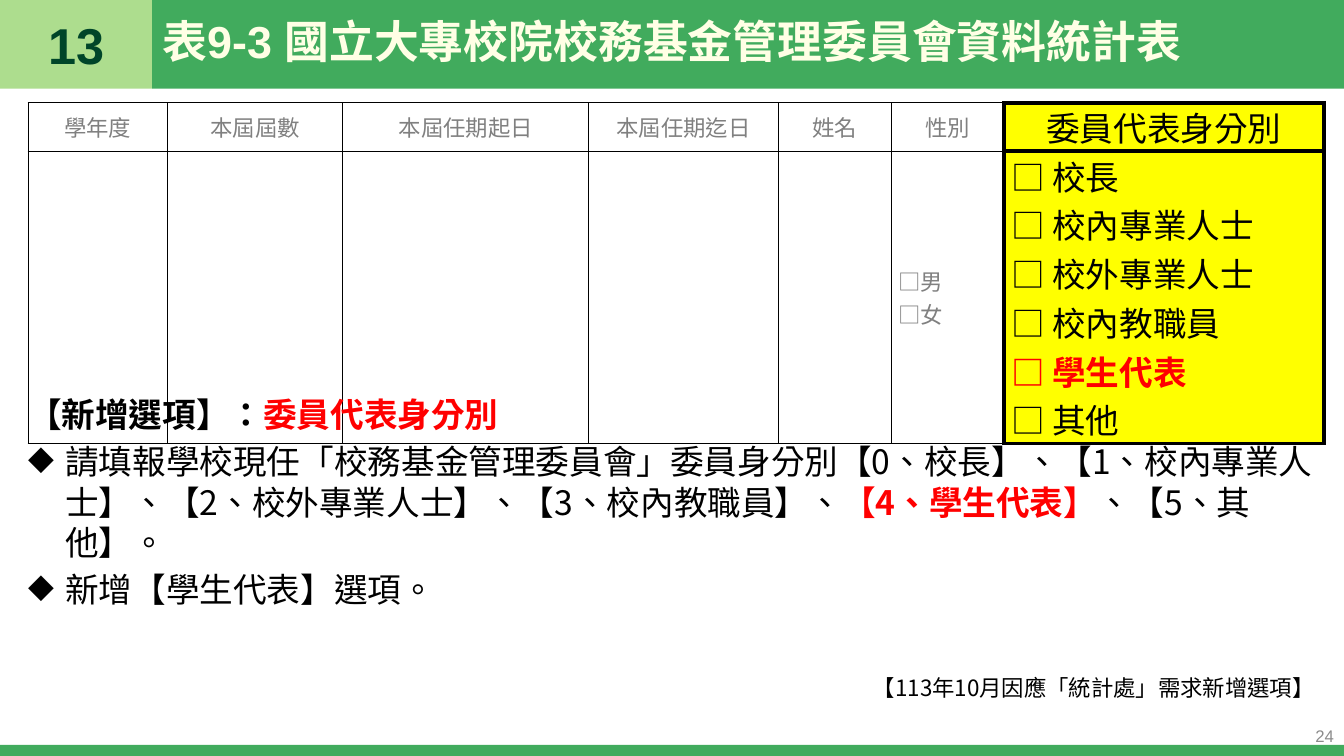
from dataclasses import dataclass

from lxml.etree import SubElement
from pptx import Presentation
from pptx.dml.color import RGBColor
from pptx.enum.shapes import MSO_SHAPE
from pptx.enum.text import MSO_ANCHOR, PP_ALIGN
from pptx.oxml.ns import qn
from pptx.util import Inches, Pt


@dataclass(frozen=True)
class Theme:
    green: str = "41AB5D"
    light_green: str = "ADDD8E"
    dark_green: str = "004529"
    cream: str = "FFFFE5"
    gray: str = "808080"
    page_gray: str = "8C8C8C"
    black: str = "000000"
    red: str = "FF0000"
    yellow: str = "FFFF00"
    latin: str = "Arial"
    cjk: str = "Noto Sans CJK SC"
    number: int = 36
    title: int = 32
    body: int = 24
    small: int = 16
    page: int = 12
    thin: int = 1
    thick: int = 3


THEME = Theme()
WIDTH, HEIGHT = 13.33, 7.5
HEADER = (0, 0, WIDTH, 0.88)
TABLE = (0.28, 1.02, 12.85, 3.38)
NOTES = (0.18, 3.86, 12.96, 3.64)
FOOTER = (0, 7.39, WIDTH, 0.12)
NUMBER_WIDTH = 1.51

COLUMNS = [("學年度", 1.38), ("本屆屆數", 1.74), ("本屆任期起日", 2.44), ("本屆任期迄日", 1.88),
           ("姓名", 1.12), ("性別", 1.12), ("委員代表身分別", 3.17)]
ROW_HEIGHTS = (0.48, 2.9)
GENDERS = ["男", "女"]
ROLES = ["校長", "校內專業人士", "校外專業人士", "校內教職員", "學生代表", "其他"]
NEW_ROLE = "學生代表"


def rgb(color):
    return RGBColor.from_string(color)


def inches(box):
    return [Inches(length) for length in box]


def write(paragraph, text, size=THEME.body, color=THEME.black, bold=False,
          font=THEME.latin, align=PP_ALIGN.LEFT, spacing=None, before=0):
    """Append one formatted run and set the format of its paragraph."""
    paragraph.alignment = align
    paragraph.space_before = Pt(before)
    if spacing:
        paragraph.line_spacing = spacing
    run = paragraph.add_run()
    run.text = text
    run.font.name, run.font.size, run.font.bold = font, Pt(size), bold
    run.font.color.rgb = rgb(color)
    properties = run.font._element
    properties.set("lang", "zh-TW")
    SubElement(properties, qn("a:ea"), typeface=THEME.cjk)


def add_diamond(paragraph, indent=0.37):
    properties = paragraph._p.get_or_add_pPr()
    properties.set("marL", str(Inches(indent)))
    properties.set("indent", str(-Inches(indent)))
    SubElement(properties, qn("a:buFont"), typeface="OpenSymbol")
    SubElement(properties, qn("a:buChar"), char="◆")


def add_band(slide, box, color):
    band = slide.shapes.add_shape(MSO_SHAPE.RECTANGLE, *inches(box))
    band.shadow.inherit = False
    band.fill.solid()
    band.fill.fore_color.rgb = rgb(color)
    band.line.fill.background()


def add_text_frame(slide, box, anchor=MSO_ANCHOR.MIDDLE):
    frame = slide.shapes.add_textbox(*inches(box)).text_frame
    frame.word_wrap = True
    frame.vertical_anchor = anchor
    return frame


def add_header(slide, box, number, heading):
    left, top, width, height = box
    number_box = (left, top, NUMBER_WIDTH, height)
    title_box = (left + NUMBER_WIDTH, top, width - NUMBER_WIDTH, height)
    add_band(slide, number_box, THEME.light_green)
    add_band(slide, title_box, THEME.green)

    title = slide.shapes.title
    slide.shapes._spTree.append(title._element)  # in front of the bands
    title.left, title.top, title.width, title.height = inches(title_box)
    title.text_frame.vertical_anchor = MSO_ANCHOR.MIDDLE
    write(title.text_frame.paragraphs[0], heading, size=THEME.title,
          color=THEME.cream, bold=True, spacing=0.9)
    write(add_text_frame(slide, number_box).paragraphs[0], number, size=THEME.number,
          color=THEME.dark_green, bold=True, align=PP_ALIGN.CENTER, before=10)


def set_borders(cell, widths):
    """Draw the left, right, top and bottom borders in the given point widths."""
    properties = cell._tc.get_or_add_tcPr()
    for position, (side, width) in enumerate(zip("LRTB", widths)):
        line = SubElement(properties, qn(f"a:ln{side}"), w=str(Pt(width)))
        fill = SubElement(line, qn("a:solidFill"))
        SubElement(fill, qn("a:srgbClr"), val=THEME.black)
        properties.insert(position, line)


def format_cell(cell, highlighted, beside_highlight):
    cell.vertical_anchor = MSO_ANCHOR.MIDDLE
    cell.margin_left = cell.margin_right = Inches(0.07)
    cell.margin_top = cell.margin_bottom = 0
    if highlighted:
        cell.fill.solid()
        cell.fill.fore_color.rgb = rgb(THEME.yellow)
        set_borders(cell, [THEME.thick] * 4)
    else:
        cell.fill.background()
        right = THEME.thick if beside_highlight else THEME.thin
        set_borders(cell, [THEME.thin, right, THEME.thin, THEME.thin])


def write_options(cell, options, mark, **style):
    frame = cell.text_frame
    for index, option in enumerate(options):
        paragraph = frame.add_paragraph() if index else frame.paragraphs[0]
        emphasis = {"color": THEME.red, "bold": True} if option == NEW_ROLE else {}
        write(paragraph, mark + option, **{**style, **emphasis})


def add_committee_table(slide, box):
    table = slide.shapes.add_table(len(ROW_HEIGHTS), len(COLUMNS), *inches(box)).table
    for row, height in zip(table.rows, ROW_HEIGHTS):
        row.height = Inches(height)
    last = len(COLUMNS) - 1
    plain = {"size": THEME.small, "color": THEME.gray}
    for index, (label, width) in enumerate(COLUMNS):
        table.columns[index].width = Inches(width)
        for row in range(len(ROW_HEIGHTS)):
            format_cell(table.cell(row, index), index == last, index == last - 1)
        style = {} if index == last else plain
        write(table.cell(0, index).text_frame.paragraphs[0], label,
              align=PP_ALIGN.CENTER, **style)
    write_options(table.cell(1, last - 1), GENDERS, "□", **plain)
    write_options(table.cell(1, last), ROLES, "□ ")


def add_notes(slide, box):
    frame = add_text_frame(slide, box, anchor=MSO_ANCHOR.TOP)
    style = {"font": THEME.cjk, "spacing": 1.0}
    heading = frame.paragraphs[0]
    write(heading, "【新增選項】：", bold=True, **style)
    write(heading, "委員代表身分別", color=THEME.red, bold=True, **style)

    instruction, addition, reason = [frame.add_paragraph() for _ in range(3)]
    style["before"] = 5
    write(instruction, "請填報學校現任「校務基金管理委員會」委員身分別【0、校長】、【1、校內專業人士】、"
          "【2、校外專業人士】、【3、校內教職員】、", **style)
    write(instruction, "【4、學生代表】", color=THEME.red, bold=True, **style)
    write(instruction, "、【5、其他】。", **style)
    write(addition, "新增【學生代表】選項。", **style)
    for paragraph in (instruction, addition):
        add_diamond(paragraph)
    style["before"] = 46
    write(reason, "【113年10月因應「統計處」需求新增選項】", size=THEME.small,
          align=PP_ALIGN.RIGHT, **style)


def add_footer(slide, box, page):
    left, top, width, height = box
    add_band(slide, box, THEME.green)
    page_box = (left + width - 3, HEIGHT - 0.4, 3, 0.4)
    write(add_text_frame(slide, page_box).paragraphs[0], page, size=THEME.page,
          color=THEME.page_gray, align=PP_ALIGN.RIGHT)


def main():
    presentation = Presentation()
    presentation.slide_width, presentation.slide_height = Inches(WIDTH), Inches(HEIGHT)
    slide = presentation.slides.add_slide(presentation.slide_layouts[5])
    add_footer(slide, FOOTER, "24")
    add_header(slide, HEADER, "13", "表9-3 國立大專校院校務基金管理委員會資料統計表")
    add_committee_table(slide, TABLE)
    add_notes(slide, NOTES)
    presentation.save("out.pptx")


if __name__ == "__main__":
    main()
